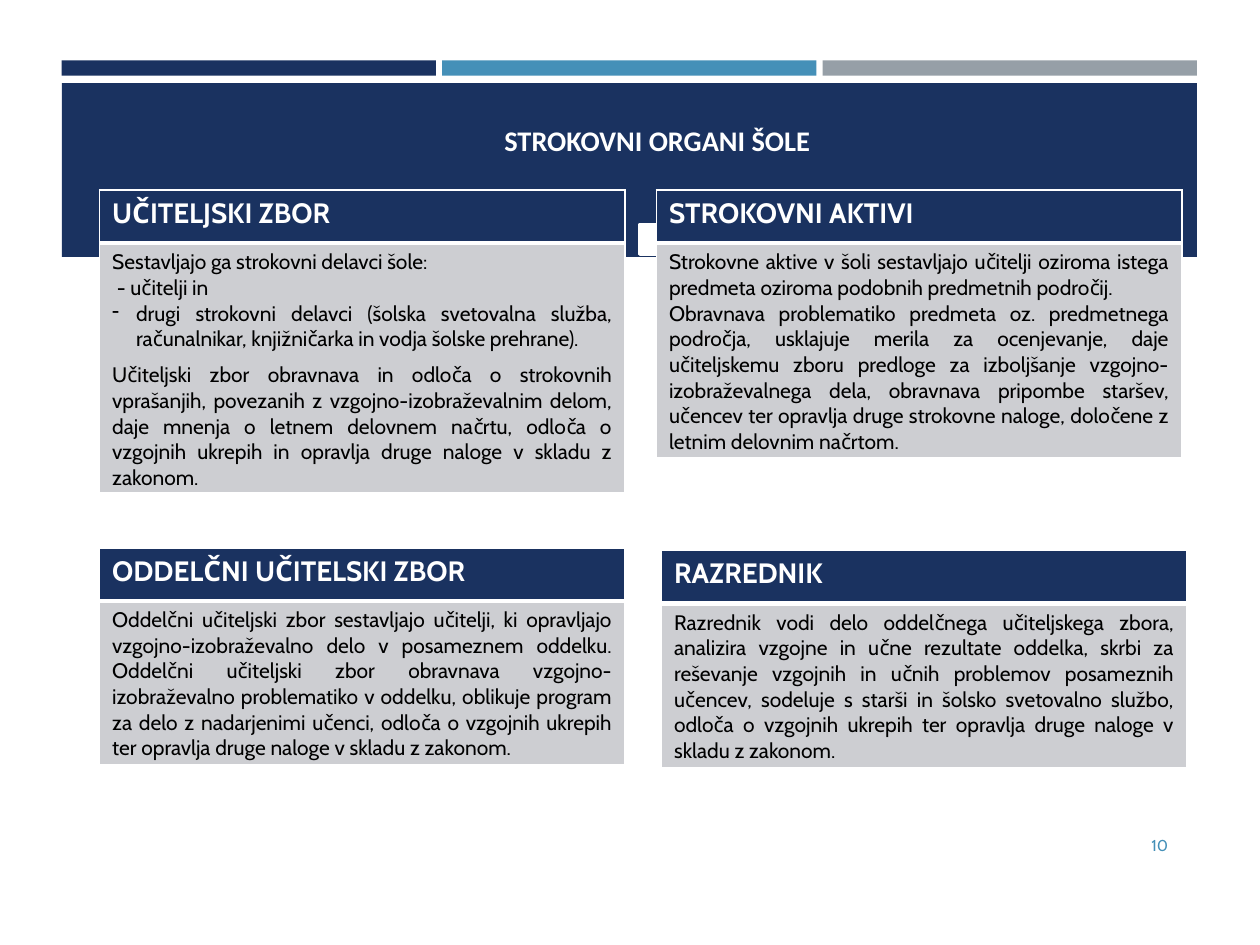
import dataclasses

import pptx
import pptx.dml.color
import pptx.enum.shapes
import pptx.enum.text
import pptx.oxml
import pptx.oxml.ns
import pptx.util
from pptx.util import Inches

ALIGN = pptx.enum.text.PP_ALIGN
ANCHOR = pptx.enum.text.MSO_ANCHOR
color = pptx.dml.color.RGBColor.from_string


@dataclasses.dataclass(frozen=True)
class Theme:
    navy: str = "1A3260"
    blue: str = "4590B8"
    gray: str = "969FA7"
    panel: str = "CDCED2"
    white: str = "FFFFFF"
    black: str = "000000"
    title_font: str = "Calibri"
    body_font: str = "Cabin"
    title_size: float = 16.2
    heading_size: float = 16
    body_size: float = 12
    number_size: float = 9


theme = Theme()


def add_text(paragraph, text, size, fill, bold=False, font=theme.body_font):
    run = paragraph.add_run()
    run.text = text
    run.font.size = pptx.util.Pt(size)
    run.font.name = font
    run.font.bold = bold
    run.font.color.rgb = color(fill)


def style_cell(cell, fill, top, bottom):
    """Fill the cell and give it white borders; widths are in points."""
    cell.fill.solid()
    cell.fill.fore_color.rgb = color(fill)
    properties = cell._tc.get_or_add_tcPr()
    widths = {"lnL": 1, "lnR": 1, "lnT": top, "lnB": bottom}
    for index, (side, width) in enumerate(widths.items()):
        border = pptx.oxml.parse_xml(
            f'<a:{side} {pptx.oxml.ns.nsdecls("a")} w="{pptx.util.Pt(width)}">'
            f'<a:solidFill><a:srgbClr val="{theme.white}"/></a:solidFill></a:{side}>'
        )
        properties.insert(index, border)


presentation = pptx.Presentation()
presentation.slide_width = Inches(10)
presentation.slide_height = Inches(7.5)
slide = presentation.slides.add_slide(presentation.slide_layouts[6])

# Three accent bars, the title band and the small white square
bars = [
    (0.49 + 3.02 * index, 0.48, 2.97, 0.12, fill)
    for index, fill in enumerate((theme.navy, theme.blue, theme.gray))
]
band = (0.49, 0.66, 9.01, 1.38, theme.navy)
square = (5.08, 1.78, 0.26, 0.24, theme.white)
for left, top, width, height, fill in bars + [band, square]:
    shape = slide.shapes.add_shape(
        pptx.enum.shapes.MSO_SHAPE.RECTANGLE,
        Inches(left), Inches(top), Inches(width), Inches(height),
    )
    shape.shadow.inherit = False
    shape.fill.solid()
    shape.fill.fore_color.rgb = color(fill)
    shape.line.fill.background()
# The square is the last shape and the only one with an outline
shape.line.color.rgb = color(theme.white)
shape.line.width = pptx.util.Pt(1.75)

# Title and page number
labels = [
    ((3.82, 0.86, 2.79, 0.44), "STROKOVNI ORGANI ŠOLE", ANCHOR.BOTTOM, ALIGN.CENTER,
     (theme.title_size, theme.white, True, theme.title_font)),
    ((8.53, 6.51, 0.84, 0.4), "10", ANCHOR.MIDDLE, ALIGN.RIGHT,
     (theme.number_size, theme.blue)),
]
for box, text, anchor, alignment, style in labels:
    frame = slide.shapes.add_textbox(*map(Inches, box)).text_frame
    frame.word_wrap = True
    frame.vertical_anchor = anchor
    paragraph = frame.paragraphs[0]
    paragraph.alignment = alignment
    add_text(paragraph, text, *style)

# Four panels: left, top, body height, heading, paragraphs (text, style)
panels = [
    (0.79, 1.51, 1.82, "UČITELJSKI ZBOR", [
        ("Sestavljajo ga strokovni delavci šole:", "plain"),
        (" - učitelji in", "plain"),
        ("drugi strokovni delavci (šolska svetovalna služba, računalnikar, "
         "knjižničarka in vodja šolske prehrane).", "bullet"),
        ("Učiteljski zbor obravnava in odloča o strokovnih vprašanjih, povezanih z "
         "vzgojno-izobraževalnim delom, daje mnenja o letnem delovnem načrtu, odloča o "
         "vzgojnih ukrepih in opravlja druge naloge v skladu z zakonom.", "spaced"),
    ]),
    (0.79, 4.35, 1.3, "ODDELČNI UČITELSKI ZBOR", [
        ("Oddelčni učiteljski zbor sestavljajo učitelji, ki opravljajo "
         "vzgojno-izobraževalno delo v posameznem oddelku. Oddelčni učiteljski zbor "
         "obravnava vzgojno-izobraževalno problematiko v oddelku, oblikuje program za "
         "delo z nadarjenimi učenci, odloča o vzgojnih ukrepih ter opravlja druge "
         "naloge v skladu z zakonom.", "plain"),
    ]),
    (5.21, 1.51, 1.5, "STROKOVNI AKTIVI", [
        ("Strokovne aktive v šoli sestavljajo učitelji oziroma istega predmeta oziroma "
         "podobnih predmetnih področij.", "plain"),
        ("Obravnava problematiko predmeta oz. predmetnega področja, usklajuje merila za "
         "ocenjevanje, daje učiteljskemu zboru predloge za izboljšanje "
         "vzgojno-izobraževalnega dela, obravnava pripombe staršev, učencev ter opravlja "
         "druge strokovne naloge, določene z letnim delovnim načrtom.", "plain"),
    ]),
    (5.25, 4.37, 1.3, "RAZREDNIK", [
        ("Razrednik vodi delo oddelčnega učiteljskega zbora, analizira vzgojne in učne "
         "rezultate oddelka, skrbi za reševanje vzgojnih in učnih problemov posameznih "
         "učencev, sodeluje s starši in šolsko svetovalno službo, odloča o vzgojnih "
         "ukrepih ter opravlja druge naloge v skladu z zakonom.", "plain"),
    ]),
]
heading_height = 0.42
for left, top, body_height, heading, body in panels:
    table = slide.shapes.add_table(
        2, 1, Inches(left), Inches(top), Inches(4.17),
        Inches(heading_height + body_height),
    ).table
    table.rows[0].height = Inches(heading_height)
    table.rows[1].height = Inches(body_height)
    heading_cell, body_cell = table.cell(0, 0), table.cell(1, 0)
    style_cell(heading_cell, theme.navy, top=1, bottom=3)
    style_cell(body_cell, theme.panel, top=3, bottom=1)
    add_text(heading_cell.text_frame.paragraphs[0], heading,
             theme.heading_size, theme.white, bold=True)

    frame = body_cell.text_frame
    for index, (text, style) in enumerate(body):
        paragraph = frame.add_paragraph() if index else frame.paragraphs[0]
        paragraph.alignment = ALIGN.JUSTIFY
        if style == "spaced":
            paragraph.space_before = pptx.util.Pt(6)
        if style == "bullet":
            properties = paragraph._p.get_or_add_pPr()
            properties.set("marL", str(Inches(0.19)))
            properties.set("indent", str(Inches(-0.19)))
            properties.append(pptx.oxml.parse_xml(
                f'<a:buChar {pptx.oxml.ns.nsdecls("a")} char="-"/>'))
        add_text(paragraph, text, theme.body_size, theme.black)

presentation.save("out.pptx")
